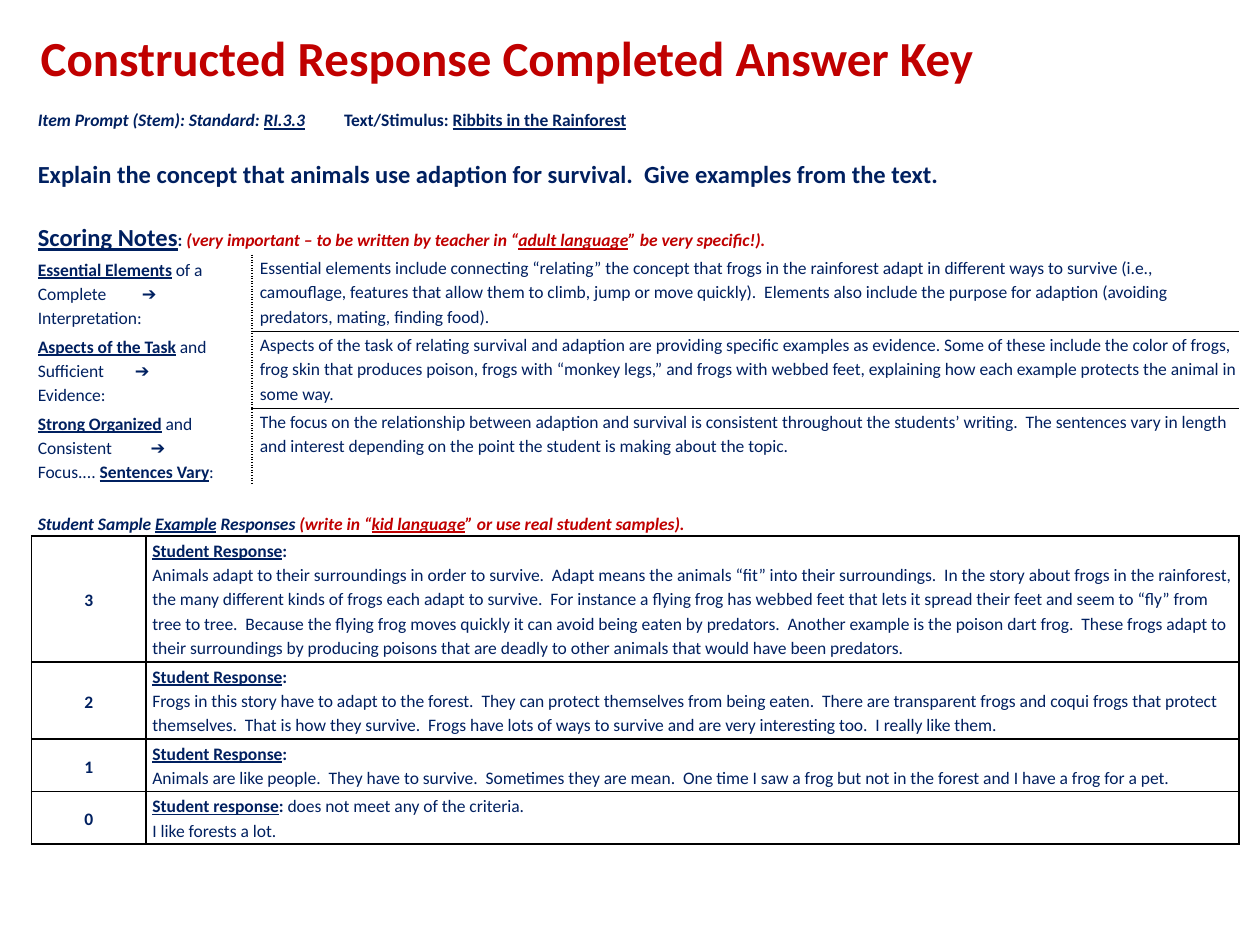
from dataclasses import dataclass

from lxml import etree
from pptx import Presentation
from pptx.dml.color import RGBColor
from pptx.enum.text import MSO_ANCHOR, PP_ALIGN
from pptx.oxml.ns import qn
from pptx.util import Pt

TOP, MIDDLE, BOTTOM = MSO_ANCHOR.TOP, MSO_ANCHOR.MIDDLE, MSO_ANCHOR.BOTTOM
LEFT, CENTER = PP_ALIGN.LEFT, PP_ALIGN.CENTER


@dataclass(frozen=True)
class Theme:
    font: str = "Calibri"
    navy: RGBColor = RGBColor(0x00, 0x20, 0x60)
    red: RGBColor = RGBColor(0xC0, 0x00, 0x00)
    white: RGBColor = RGBColor(0xFF, 0xFF, 0xFF)
    border: str = "000000"
    title: int = 28
    heading: int = 14
    body: int = 10
    spacing: float = 1.15


theme = Theme()


def write(para, spans, size=theme.body):
    """Add (text, flags) runs: b bold, i italic, u underlined, r red, h heading size."""
    for text, flags in spans:
        span = para.add_run()
        span.text = text
        font = span.font
        font.name = theme.font
        font.size = Pt(theme.heading if "h" in flags else size)
        font.bold, font.italic, font.underline = (f in flags for f in "biu")
        font.color.rgb = theme.red if "r" in flags else theme.navy


def fill_cell(cell, paragraphs, anchor=TOP, align=LEFT, inset=3.6, tab=None):
    cell.vertical_anchor = anchor
    cell.margin_left, cell.margin_right = Pt(inset), Pt(3.6 if inset == 3.6 else 0)
    cell.margin_top = cell.margin_bottom = Pt(0.7 if inset == 3.6 else 0)
    frame = cell.text_frame
    for index, spans in enumerate(paragraphs):
        para = frame.paragraphs[0] if index == 0 else frame.add_paragraph()
        para.alignment = align
        para.line_spacing = theme.spacing
        if tab and any("\t" in text for text, _ in spans):
            stops = etree.SubElement(para._p.get_or_add_pPr(), qn("a:tabLst"))
            etree.SubElement(stops, qn("a:tab"), pos=str(Pt(tab)), algn="l")
        write(para, spans)


# Each criterion: label lines, tab position of the arrow, scoring note
criteria = [
    ([[("Essential Elements", "bu"), (" of a", "")],
      [("Complete\t➔", "")],
      [("Interpretation:", "")]], 59.5,
     "Essential elements include connecting “relating” the concept that frogs in the "
     "rainforest adapt in different ways to survive (i.e., camouflage, features that allow "
     "them to climb, jump or move quickly).  Elements also include the purpose for adaption "
     "(avoiding predators, mating, finding food)."),
    ([[("Aspects of the Task", "bu"), (" and", "")],
      [("Sufficient\t➔", "")],
      [("Evidence:", "")]], 55.5,
     "Aspects of the task of relating survival and adaption are providing specific examples "
     "as evidence. Some of these include the color of frogs, frog skin that produces poison, "
     "frogs with “monkey legs,” and frogs with webbed feet, explaining how each example "
     "protects the animal in some way."),
    ([[("Strong Organized", "bu"), (" and", "")],
      [("Consistent\t➔", "")],
      [("Focus.... ", ""), ("Sentences Vary", "bu"), (":", "")]], 64.5,
     "The focus on the relationship between adaption and survival is consistent throughout "
     "the students’ writing.  The sentences vary in length and interest depending on the "
     "point the student is making about the topic."),
]

# Each response: score, heading, remark beside the heading, answer
responses = [
    ("3", "Student Response", "",
     "Animals adapt to their surroundings in order to survive.  Adapt means the animals “fit” "
     "into their surroundings.  In the story about frogs in the rainforest, the many different "
     "kinds of frogs each adapt to survive.  For instance a flying frog has webbed feet that "
     "lets it spread their feet and seem to “fly” from tree to tree.  Because the flying frog "
     "moves quickly it can avoid being eaten by predators.  Another example is the poison dart "
     "frog.  These frogs adapt to their surroundings by producing poisons that are deadly to "
     "other animals that would have been predators."),
    ("2", "Student Response", "",
     "Frogs in this story have to adapt to the forest.  They can protect themselves from being "
     "eaten.  There are transparent frogs and coqui frogs that protect themselves.  That is how "
     "they survive.  Frogs have lots of ways to survive and are very interesting too.  I really "
     "like them."),
    ("1", "Student Response", "",
     "Animals are like people.  They have to survive.  Sometimes they are mean.  One time I saw "
     "a frog but not in the forest and I have a frog for a pet."),
    ("0", "Student response", " does not meet any of the criteria.",
     "I like forests a lot."),
]

deck = Presentation()
deck.slide_width, deck.slide_height = Pt(720), Pt(540)
page = deck.slides.add_slide(deck.slide_layouts[6])

column_widths = [65.5, 60.5, 564]
row_heights = [50, 35, 44, 44, 44, 29, 72, 44, 30, 30]
first_criterion, sample_row, first_response = 2, 5, 6

frame = page.shapes.add_table(len(row_heights), len(column_widths), Pt(18), Pt(60.5),
                              Pt(sum(column_widths)), Pt(sum(row_heights)))
table = frame.table
table.first_row = table.horz_banding = False
for column, width in zip(table.columns, column_widths):
    column.width = Pt(width)
for row, height in zip(table.rows, row_heights):
    row.height = Pt(height)

# Borders and fills
for r in range(len(row_heights)):
    for c in range(len(column_widths)):
        edges = {}
        if r >= first_response:
            edges = dict.fromkeys("LRTB", "solid")
        elif r == sample_row:
            edges = {"B": "solid"}
        elif r >= first_criterion:
            if c == 1:
                edges["R"] = "sysDot"
            if c == 2:
                edges["L"] = "sysDot"
                if r > first_criterion:
                    edges["T"] = "solid"
                if r < sample_row - 1:
                    edges["B"] = "solid"
        cell = table.cell(r, c)
        properties = cell._tc.get_or_add_tcPr()
        for side in "LRTB":
            line = etree.SubElement(properties, qn(f"a:ln{side}"), w=str(Pt(1)))
            if side in edges:
                paint = etree.SubElement(line, qn("a:solidFill"))
                etree.SubElement(paint, qn("a:srgbClr"), val=theme.border)
                etree.SubElement(line, qn("a:prstDash"), val=edges[side])
            else:
                etree.SubElement(line, qn("a:noFill"))
        cell.fill.solid()
        cell.fill.fore_color.rgb = theme.white

# Full-width rows
for r in (0, 1, sample_row):
    table.cell(r, 0).merge(table.cell(r, 2))
prompt = table.cell(0, 0)
fill_cell(prompt, [
    [("Item Prompt (Stem): Standard: ", "bi"), ("RI.3.3", "biu"),
     ("\tText/Stimulus: ", "b"), ("Ribbits in the Rainforest", "bu")],
    [("Explain the concept that animals use adaption for survival.  "
      "Give examples from the text.", "bh")],
], tab=175)
prompt.text_frame.paragraphs[1].space_before = Pt(14)
fill_cell(table.cell(1, 0), [[
    ("Scoring Notes", "buh"), (": ", "b"),
    ("(very important – to be written by teacher in “", "bir"),
    ("adult language", "biur"), ("” be very specific!).", "bir")]], BOTTOM)
fill_cell(table.cell(sample_row, 0), [[
    ("Student Sample ", "bi"), ("Example", "biu"), (" Responses ", "bi"),
    ("(write in “", "bir"), ("kid language", "biur"),
    ("” or use real student samples).", "bir")]], BOTTOM)

for r, (label, tab, note) in enumerate(criteria, first_criterion):
    table.cell(r, 0).merge(table.cell(r, 1))
    fill_cell(table.cell(r, 0), label, MIDDLE, tab=tab)
    fill_cell(table.cell(r, 2), [[(note, "")]], inset=4.5)

for r, (score, heading, remark, answer) in enumerate(responses, first_response):
    table.cell(r, 1).merge(table.cell(r, 2))
    fill_cell(table.cell(r, 0), [[(score, "b")]], MIDDLE, CENTER)
    opening = [(heading, "bu"), (":", "b")]
    if remark:
        opening.append((remark, ""))
    fill_cell(table.cell(r, 1), [opening, [(answer, "")]])

title = page.shapes.add_textbox(Pt(12.25), Pt(12.25), Pt(661.5), Pt(63.5))
title.text_frame.word_wrap = True
title.text_frame.margin_left = Pt(11)
write(title.text_frame.paragraphs[0],
      [("Constructed Response Completed Answer Key", "br")], theme.title)

deck.save("out.pptx")
